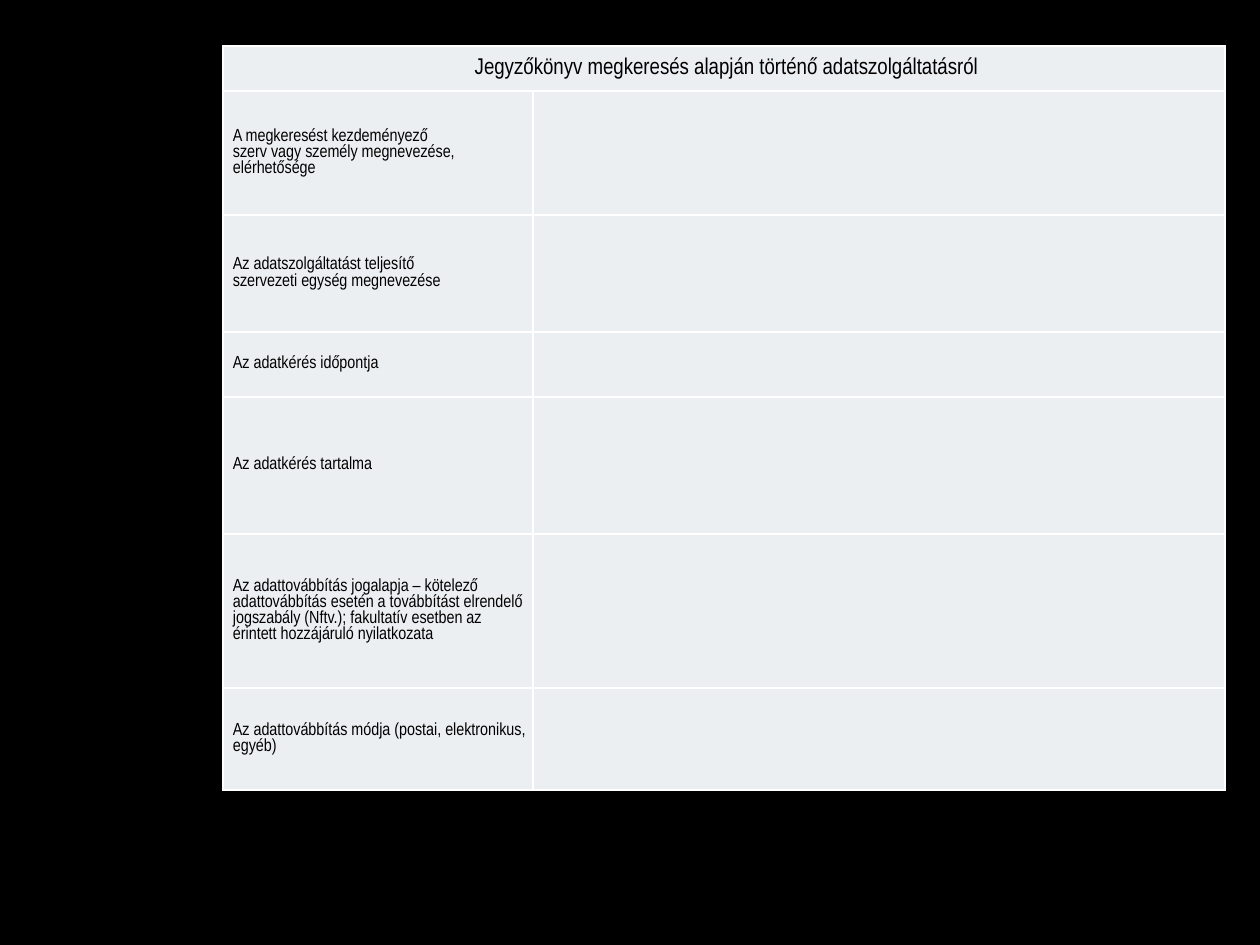
from lxml.etree import SubElement
from pptx import Presentation
from pptx.dml.color import RGBColor
from pptx.enum.text import MSO_ANCHOR as Anchor, PP_ALIGN as Align
from pptx.oxml.ns import qn
from pptx.util import Emu, Pt

PX_PER_INCH = 126
FONT = "Arial Narrow"
BLACK, WHITE, PALE = "000000", "FFFFFF", "ECEFF1"

TITLE = "Jegyzőkönyv megkeresés alapján történő adatszolgáltatásról"
ROWS = [
    (124, ["A megkeresést kezdeményező",
           "szerv vagy személy megnevezése,",
           "elérhetősége"]),
    (117, ["Az adatszolgáltatást teljesítő",
           "szervezeti egység megnevezése"]),
    (65, ["Az adatkérés időpontja"]),
    (137, ["Az adatkérés tartalma"]),
    (154, ["Az adattovábbítás jogalapja – kötelező adattovábbítás esetén "
           "a továbbítást elrendelő jogszabály (Nftv.); fakultatív esetben "
           "az érintett hozzájáruló nyilatkozata"]),
    (102, ["Az adattovábbítás módja (postai, elektronikus, egyéb)"]),
]
TITLE_HEIGHT = 45
COLUMNS = [310, 692]


def px(length):
    return Emu(round(length * 914400 / PX_PER_INCH))


def color(hex_string):
    return RGBColor.from_string(hex_string)


def write(cell, lines, size=10, align=Align.LEFT, indent=4):
    cell.vertical_anchor = Anchor.MIDDLE
    cell.margin_left = cell.margin_right = px(6)
    cell.margin_top = cell.margin_bottom = 0
    frame = cell.text_frame
    frame.text = "\n".join(lines)
    for paragraph in frame.paragraphs:
        properties = paragraph._p.get_or_add_pPr()
        properties.set("marL", str(px(indent)))
        properties.set("indent", "0")
        paragraph.alignment = align
        for run in paragraph.runs:
            run.font.size = Pt(size)
            run.font.name = FONT
            run.font.color.rgb = color(BLACK)


def style_cell(cell, fill=PALE, border=WHITE, width=1):
    """Give the cell a solid fill and the same border on all sides."""
    properties = cell._tc.get_or_add_tcPr()
    for side in ("a:lnL", "a:lnR", "a:lnT", "a:lnB"):
        line = SubElement(properties, qn(side), w=str(Pt(width)))
        solid = SubElement(line, qn("a:solidFill"))
        SubElement(solid, qn("a:srgbClr"), val=border)
    cell.fill.solid()
    cell.fill.fore_color.rgb = color(fill)


def add_record_table(slide, left, top):
    heights = [TITLE_HEIGHT] + [height for height, _ in ROWS]
    table = slide.shapes.add_table(
        len(heights), len(COLUMNS), px(left), px(top),
        px(sum(COLUMNS)), px(sum(heights))).table
    table.first_row = table.horz_banding = False
    for column, width in zip(table.columns, COLUMNS):
        column.width = px(width)
    for row, height in zip(table.rows, heights):
        row.height = px(height)
    for cell in table.iter_cells():
        style_cell(cell)

    table.cell(0, 0).merge(table.cell(0, 1))
    write(table.cell(0, 0), [TITLE], size=13, align=Align.CENTER)
    for index, (_, lines) in enumerate(ROWS, start=1):
        write(table.cell(index, 0), lines)


def main():
    presentation = Presentation()
    presentation.slide_width = px(1260)
    presentation.slide_height = px(945)
    slide = presentation.slides.add_slide(presentation.slide_layouts[6])
    background = slide.background.fill
    background.solid()
    background.fore_color.rgb = color(BLACK)
    add_record_table(slide, left=223, top=46)
    presentation.save("out.pptx")


if __name__ == "__main__":
    main()
